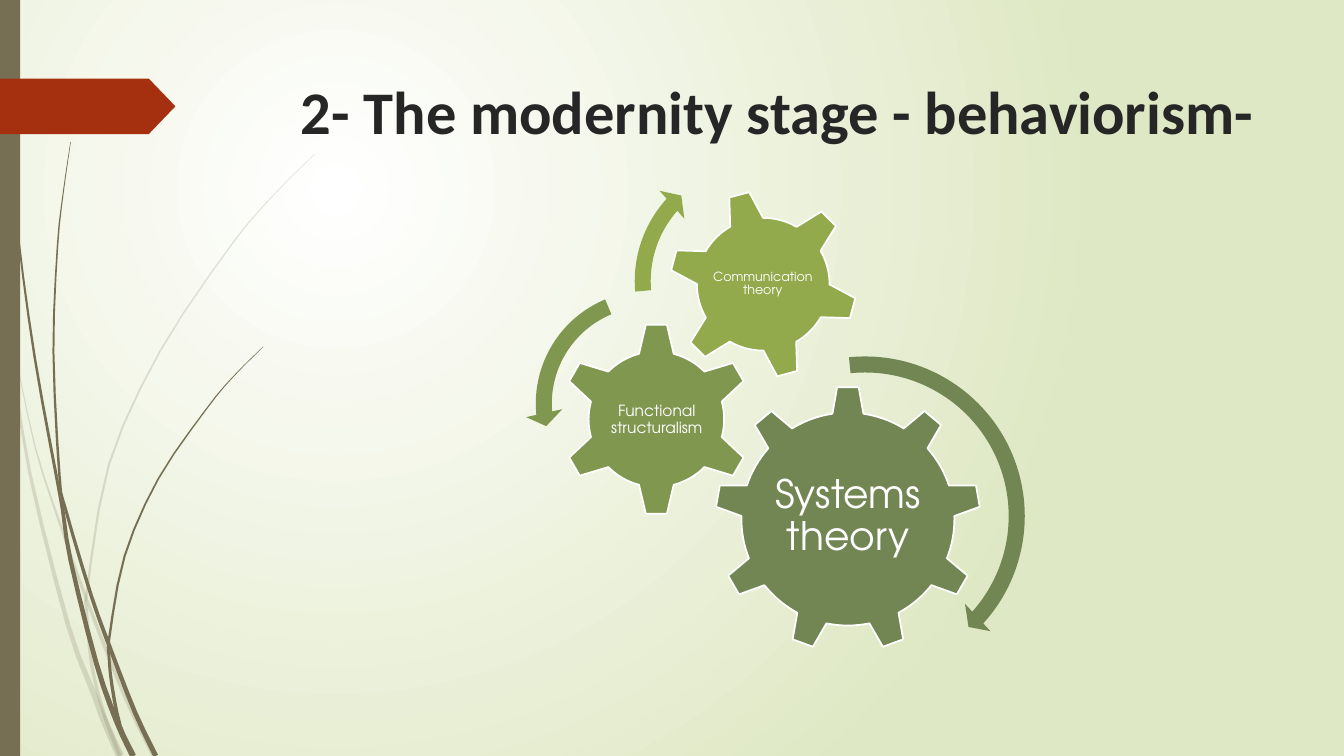
from math import hypot

from lxml import etree
from pptx import Presentation
from pptx.dml.color import RGBColor
from pptx.enum.shapes import MSO_SHAPE
from pptx.enum.text import MSO_ANCHOR, PP_ALIGN
from pptx.oxml.ns import qn
from pptx.util import Inches, Pt

RECT, TAG = MSO_SHAPE.RECTANGLE, MSO_SHAPE.PENTAGON
GEAR_SIX, GEAR_NINE = MSO_SHAPE.GEAR_6, MSO_SHAPE.GEAR_9
ARC, LEFT_ARC = MSO_SHAPE.CIRCULAR_ARROW, MSO_SHAPE.LEFT_CIRCULAR_ARROW
TOP, MIDDLE, CENTER = MSO_ANCHOR.TOP, MSO_ANCHOR.MIDDLE, PP_ALIGN.CENTER

CELL = Inches(0.1)
COLS, ROWS = 133.3, 75
STEPS = 3
BROWN, RED, WHITE, INK = "766F54", "A53010", "FFFFFF", "262626"
MOSS, LEAF, LIME, MIST = "728653", "809750", "92AA4C", "DFE8C4"
FONT = "TeX Gyre Adventor"

PALE_STEMS = [
    (0.8, (0, 1, 5, 6), [(0, 29), (1.1, 35), (2.95, 46.9), (6.75, 62), (9.3, 68.8),
                         (10.3, 71.4), (11.9, 75)]),
    (0.5, (0, 3, 5), [(1.4, 34.5), (3.5, 44.4), (6, 52.1), (8.6, 59.5), (12.5, 69.3),
                      (15.3, 75)]),
    (0.4, (0, 5, 6, 8, 9), [(31.2, 15.3), (26.8, 19.7), (22.8, 24.5), (15.9, 34.8),
                            (10.8, 46.1), (8.65, 58.5), (8.6, 60.5), (9.1, 66),
                            (10.4, 71.1), (11.9, 75)]),
]
DARK_STEMS = [
    (0.6, (0, 4, 5, 8, 9), [(0.35, 0), (0.75, 11), (1.8, 23.3), (3.45, 35.5), (5.6, 47.3),
                            (6.2, 50.5), (7, 55.6), (9.55, 65.8), (11.55, 71.5),
                            (13.2, 75)]),
    (0.5, (0, 4, 7, 9), [(7, 14.1), (6.25, 19.3), (5.7, 24.5), (5.3, 34.9), (5.9, 47.2),
                         (6.5, 50.5), (9.05, 59.1), (11, 64.5), (13.4, 70.7),
                         (15.45, 75)]),
    (0.4, (0, 5, 6, 8, 9), [(26.1, 34.4), (23.1, 37.4), (20.45, 40.6), (15.7, 47.5),
                            (12.35, 55.2), (10.85, 63.2), (10.8, 65), (11.1, 68),
                            (11.9, 72), (13.2, 75)]),
]
GEARS = [
    (GEAR_NINE, (70.9, 38.3, 26.4), 0, MOSS, "Systems theory", 28, (76.2, 44.5, 15.8, 13.6)),
    (GEAR_SIX, (55.5, 32, 19.2), 0, LEAF, "Functional structuralism", 11, (60.4, 36.9, 9.5, 9.5)),
    (GEAR_SIX, (66.3, 18.8, 18.8), -15, LIME, "Communication theory", 9, (70.4, 22.9, 10.5, 10.5)),
]
ARROWS = [
    (ARC, (68.9, 34.3, 33.8), MOSS, 4.7, (4.98, 42.01, 264.2), 5.5),
    (LEFT_ARC, (52.1, 27.8, 24.5), LEAF, 6.5, (7.17, 174.82, 247.3), 7.5),
    (ARC, (61.9, 14.7, 26.4), LIME, 6, (6.57, 221.9, 175.14), 7),
]


def tint(color, code):
    color.rgb = RGBColor.from_string(code)


def grid(*cells):
    return [round(cell * CELL) for cell in cells]


def paint(shape, code, edge=None):
    shape.shadow.inherit = False
    shape.fill.solid()
    tint(shape.fill.fore_color, code)
    if edge:
        tint(shape.line.color, edge)
        shape.line.width = Pt(1.25)
    else:
        shape.line.fill.background()


def draw(slide, kind, box, code, edge=None, turn=0, adjust=()):
    shape = slide.shapes.add_shape(kind, *grid(*box))
    paint(shape, code, edge)
    shape.rotation = turn
    for slot, value in enumerate(adjust):
        shape.adjustments[slot] = value


def write(box, text, size, code, font, bold=False, anchor=MIDDLE):
    frame = box.text_frame
    frame.word_wrap = True
    frame.vertical_anchor = anchor
    frame.margin_left = frame.margin_right = Inches(0.02)
    line = frame.paragraphs[0]
    line.text = text
    line.alignment = CENTER
    line.font.name = font
    line.font.size = Pt(size)
    line.font.bold = bold
    tint(line.font.color, code)
    return line


def curve(knots):
    ends = [knots[0], *knots, knots[-1]]
    dots = []
    for quad in zip(ends, ends[1:], ends[2:], ends[3:]):
        for step in range(STEPS):
            t = step / STEPS
            dots.append(tuple(
                b + t * (c - a) / 2 + t * t * (2 * a - 5 * b + 4 * c - d) / 2
                + t ** 3 * (3 * b - a - 3 * c + d) / 2
                for a, b, c, d in zip(*quad)))
    return dots + [knots[-1]]


def stem(slide, width, cuts, knots, alpha=None):
    dots = curve(knots)
    last = len(dots) - 1
    near, far = [], []
    for spot, (x, y) in enumerate(dots):
        x0, y0 = dots[max(spot - 1, 0)]
        x1, y1 = dots[min(spot + 1, last)]
        half = width * (0.1 + 0.9 * spot / last) / 2
        span = hypot(x1 - x0, y1 - y0)
        dx, dy = half * (y1 - y0) / span, half * (x0 - x1) / span
        near.append(grid(x + dx, y + dy))
        far.append(grid(x - dx, y - dy))
    for start, end in zip(cuts, cuts[1:]):
        part = slice(start * STEPS, end * STEPS + 1)
        blade(slide, near[part] + far[part][::-1], alpha)


def blade(slide, rim, alpha):
    pen = slide.shapes.build_freeform(*rim[0])
    pen.add_line_segments(rim[1:], close=True)
    shape = pen.convert_to_shape()
    paint(shape, BROWN)
    if alpha:
        color = shape.fill._xPr.find(".//" + qn("a:srgbClr"))
        etree.SubElement(color, qn("a:alpha")).set("val", str(alpha * 1000))


def glow(slide):
    fill = slide.background.fill
    fill.gradient()
    for stop, code in zip(fill.gradient_stops, (WHITE, MIST)):
        tint(stop.color, code)
    line = slide._element.find(".//" + qn("a:lin"))
    ring = etree.Element(qn("a:path"))
    ring.set("path", "circle")
    rect = etree.SubElement(ring, qn("a:fillToRect"))
    for side, share in zip("ltrb", (50, 50, 100, 100)):
        rect.set(side, str(share * 1000))
    line.getparent().replace(line, ring)


def head(slide, text):
    title = slide.shapes.title
    title.left, title.top, title.width, title.height = grid(28.35, 6.8, 97.5, 14)
    write(title, text, 43.2, INK, "Calibri", True, TOP)


def gear(slide, kind, place, turn, code, text, size, area):
    x, y, side = place
    draw(slide, kind, (x, y, side, side), code, WHITE, turn)
    box = slide.shapes.add_textbox(*grid(*area))
    write(box, text, size, WHITE, FONT).line_spacing = 0.9


def arrow(slide, kind, place, code, thick, angles, tip):
    x, y, side = place
    turns = [angle * 0.6 for angle in angles]
    draw(slide, kind, (x, y, side, side), code, adjust=[thick / 100, *turns, tip / 100])


def main():
    deck = Presentation()
    deck.slide_width, deck.slide_height = grid(COLS, ROWS)
    slide = deck.slides.add_slide(deck.slide_layouts[5])
    glow(slide)
    for item in PALE_STEMS:
        stem(slide, *item, alpha=20)
    for item in DARK_STEMS:
        stem(slide, *item)
    draw(slide, RECT, (0, 0, 2, ROWS), BROWN)
    draw(slide, TAG, (0, 7.8, 17.4, 5.5), RED, adjust=[0.48])
    head(slide, "2- The modernity stage - behaviorism-")
    for item in GEARS:
        gear(slide, *item)
    for item in ARROWS:
        arrow(slide, *item)
    deck.save("out.pptx")


if __name__ == "__main__":
    main()
